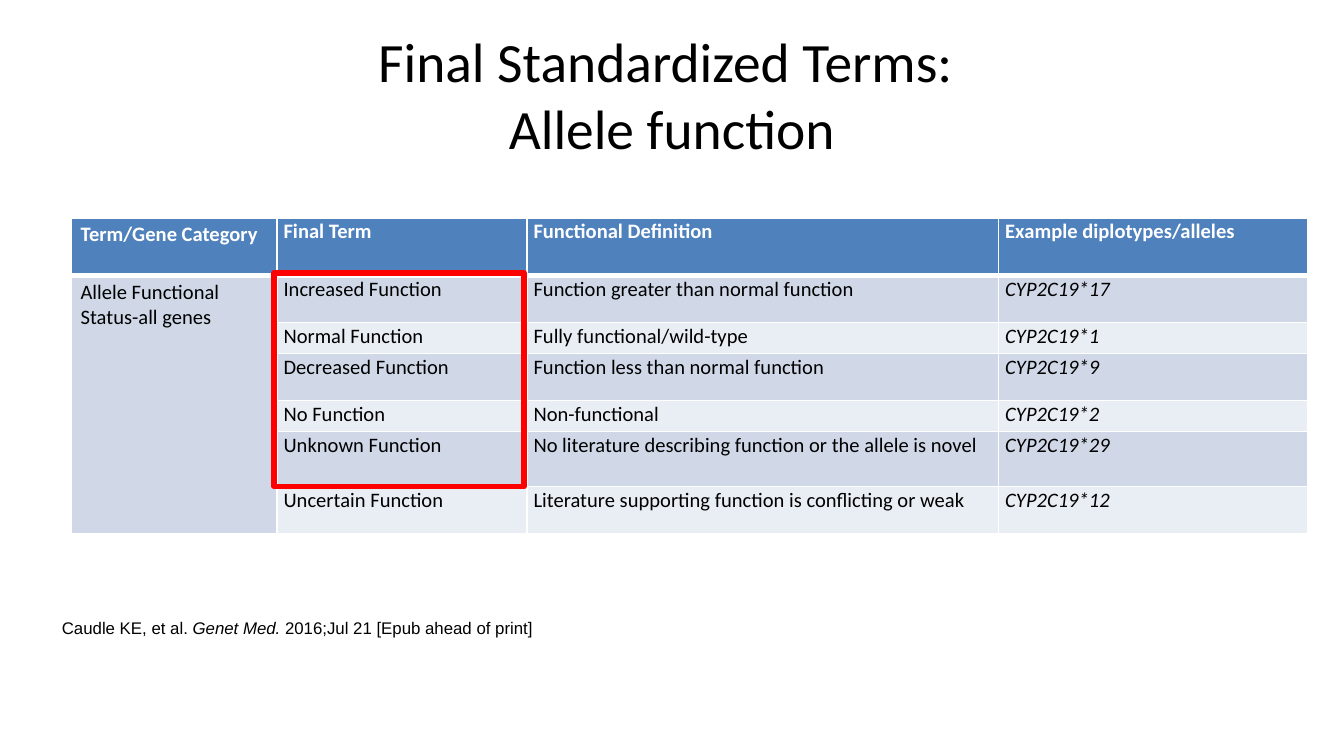
from lxml.etree import SubElement
from pptx import Presentation
from pptx.dml.color import RGBColor
from pptx.enum.shapes import MSO_SHAPE as Shape
from pptx.enum.text import MSO_ANCHOR as Anchor, MSO_AUTO_SIZE as AutoSize, PP_ALIGN as Align
from pptx.oxml.ns import qn
from pptx.util import Inches, Pt

BLACK = RGBColor(0x00, 0x00, 0x00)
WHITE = RGBColor(0xFF, 0xFF, 0xFF)
HEADER_BLUE = RGBColor(0x4F, 0x81, 0xBD)
BAND_DARK = RGBColor(0xD0, 0xD8, 0xE8)
BAND_LIGHT = RGBColor(0xE9, 0xED, 0xF4)
RED = RGBColor(0xFF, 0x00, 0x00)

COLUMN_WIDTHS = [1.53, 1.86, 3.51, 2.3]
ROW_HEIGHTS = [0.43, 0.35, 0.23, 0.35, 0.23, 0.41, 0.35]
TERMS = [
    ("Term/Gene Category", "Final Term", "Functional Definition", "Example diplotypes/alleles"),
    ("Allele Functional Status-all genes", "Increased Function",
     "Function greater than normal function", "CYP2C19*17"),
    ("", "Normal Function", "Fully functional/wild-type", "CYP2C19*1"),
    ("", "Decreased Function", "Function less than normal function", "CYP2C19*9"),
    ("", "No Function", "Non-functional", "CYP2C19*2"),
    ("", "Unknown Function",
     "No literature describing function or the allele is novel", "CYP2C19*29"),
    ("", "Uncertain Function",
     "Literature supporting function is conflicting or weak", "CYP2C19*12"),
]


def write(paragraph, text, size=11, font="Calibri", color=BLACK, bold=False, italic=False):
    run = paragraph.add_run()
    run.text = text
    run.font.size = Pt(size)
    run.font.name = font
    run.font.color.rgb = color
    run.font.bold = bold
    run.font.italic = italic


def set_insets(holder, side, top):
    holder.margin_left = holder.margin_right = Inches(side)
    holder.margin_top = holder.margin_bottom = Inches(top)


def place(shape, left, top, width, height):
    shape.left, shape.top = Inches(left), Inches(top)
    shape.width, shape.height = Inches(width), Inches(height)


def add_title(slide, first_line, second_line):
    title = slide.shapes.title
    place(title, 0.5, 0.23, 9, 0.94)
    frame = title.text_frame
    set_insets(frame, 0.07, 0.04)
    frame.word_wrap = True
    frame.auto_size = AutoSize.NONE
    frame.vertical_anchor = Anchor.MIDDLE
    heading = frame.paragraphs[0]
    heading.alignment = Align.CENTER
    write(heading, first_line, size=29.7)
    heading.add_line_break()
    write(heading, second_line, size=29.7)


def set_borders(cell, bottom_width):
    properties = cell._tc.get_or_add_tcPr()
    for side, width in (("L", 1), ("R", 1), ("T", 1), ("B", bottom_width)):
        border = SubElement(properties, qn(f"a:ln{side}"), w=str(Pt(width)))
        fill = SubElement(border, qn("a:solidFill"))
        SubElement(fill, qn("a:srgbClr"), val=str(WHITE))


def fill_cell(cell, text, row, column):
    is_header = row == 0
    is_category = column == 0
    set_borders(cell, 3 if is_header else 1)
    cell.fill.solid()
    if is_header:
        cell.fill.fore_color.rgb = HEADER_BLUE
    else:
        cell.fill.fore_color.rgb = BAND_DARK if row % 2 or is_category else BAND_LIGHT
    set_insets(cell, *((0.07, 0.03) if is_category else (0.05, 0)))
    if not text:
        return
    paragraph = cell.text_frame.paragraphs[0]
    if not is_category:
        paragraph.line_spacing = 1.05
        paragraph.space_before = Pt(6)
    write(paragraph, text, color=WHITE if is_header else BLACK, bold=is_header,
          italic=column == 3 and not is_header)


def add_terms_table(slide):
    terms = slide.shapes.add_table(
        len(TERMS), len(COLUMN_WIDTHS),
        Inches(0.53), Inches(1.62), Inches(9.19), Inches(2.36)).table
    for column, width in zip(terms.columns, COLUMN_WIDTHS):
        column.width = Inches(width)
    for row, height in zip(terms.rows, ROW_HEIGHTS):
        row.height = Inches(height)
    terms.cell(1, 0).merge(terms.cell(len(TERMS) - 1, 0))
    for row, texts in enumerate(TERMS):
        for column, text in enumerate(texts):
            fill_cell(terms.cell(row, column), text, row, column)


def add_citation(slide, *parts):
    citation = slide.shapes.add_textbox(Inches(0.39), Inches(4.56), Inches(7.01), Inches(0.23))
    frame = citation.text_frame
    set_insets(frame, 0.07, 0.04)
    frame.word_wrap = True
    frame.auto_size = AutoSize.SHAPE_TO_FIT_TEXT
    for text, italic in parts:
        write(frame.paragraphs[0], text, size=9, font="Arial", italic=italic)


def add_highlight(slide):
    highlight = slide.shapes.add_shape(
        Shape.RECTANGLE, Inches(2.04), Inches(2.03), Inches(1.86), Inches(1.59))
    highlight.shadow.inherit = False
    highlight.fill.background()
    highlight.line.color.rgb = RED
    highlight.line.width = Pt(3)


def main():
    presentation = Presentation()
    presentation.slide_width = Inches(10)
    presentation.slide_height = Inches(10 * 9 / 16)
    slide = presentation.slides.add_slide(presentation.slide_layouts[5])
    add_title(slide, "Final Standardized Terms: ", "Allele function")
    add_terms_table(slide)
    add_citation(slide, ("Caudle KE, et al. ", False), ("Genet Med.", True),
                 (" 2016;Jul 21 [Epub ahead of print]", False))
    add_highlight(slide)
    presentation.save("out.pptx")


if __name__ == "__main__":
    main()
